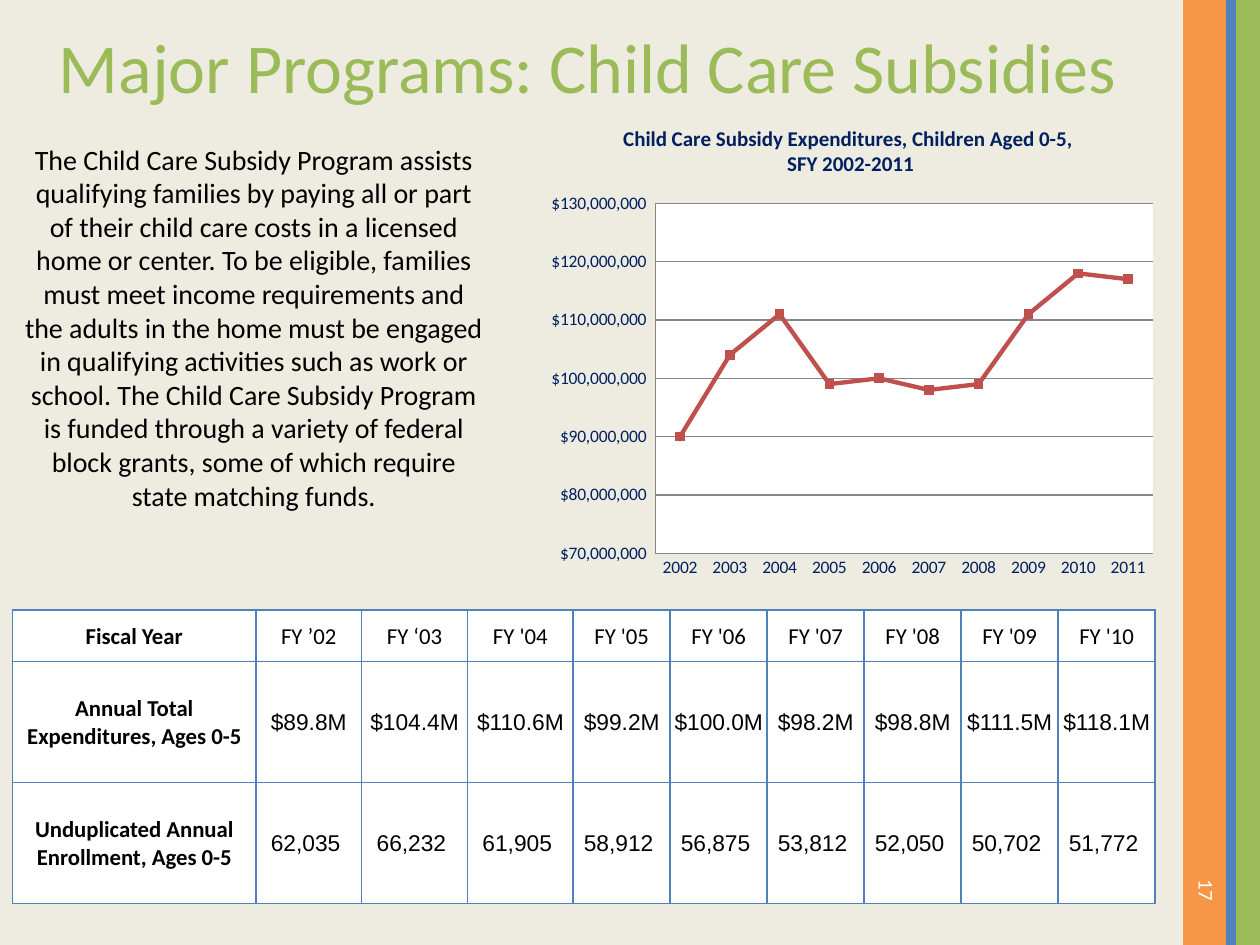
from dataclasses import dataclass

from lxml import etree
from pptx import Presentation
from pptx.chart.data import CategoryChartData
from pptx.dml.color import RGBColor
from pptx.enum import chart as ch, shapes, text
from pptx.oxml import ns, parse_xml
from pptx.util import Inches, Pt


@dataclass(frozen=True)
class Theme:
    background: RGBColor = RGBColor.from_string("EEECE1")
    orange: RGBColor = RGBColor.from_string("F79646")
    green: RGBColor = RGBColor.from_string("9BBB59")
    blue: RGBColor = RGBColor.from_string("4F81BD")
    red: RGBColor = RGBColor.from_string("C0504D")
    navy: RGBColor = RGBColor.from_string("002060")
    grid: RGBColor = RGBColor.from_string("878787")
    white: RGBColor = RGBColor.from_string("FFFFFF")
    black: RGBColor = RGBColor.from_string("000000")
    font: str = "Calibri"
    figures: str = "Arial"
    title: int = 40
    body: int = 16
    table: int = 13
    small: int = 12
    axis: int = 10


THEME = Theme()
CENTER = text.PP_ALIGN.CENTER

TITLE = "Major Programs: Child Care Subsidies"
BODY = (
    "The Child Care Subsidy Program assists qualifying families by paying all or part "
    "of their child care costs in a licensed home or center. To be eligible, families "
    "must meet income requirements and the adults in the home must be engaged in "
    "qualifying activities such as work or school. The Child Care Subsidy Program is "
    "funded through a variety of federal block grants, some of which require state "
    "matching funds."
)
CHART_TITLE = "Child Care Subsidy Expenditures, Children Aged 0-5, \nSFY 2002-2011"

# Millions of dollars: whole for the chart (2002-2011), exact for the table (2002-2010)
CHART_MILLIONS = [90, 104, 111, 99, 100, 98, 99, 111, 118, 117]
SPENDING = [89.8, 104.4, 110.6, 99.2, 100.0, 98.2, 98.8, 111.5, 118.1]
ENROLLMENT = [62035, 66232, 61905, 58912, 56875, 53812, 52050, 50702, 51772]
TABLE_ROWS = [
    ["Fiscal Year", "FY ’02", "FY ‘03"] + [f"FY '{y:02}" for y in range(4, 11)],
    ["Annual Total Expenditures, Ages 0-5"] + [f"${v:.1f}M" for v in SPENDING],
    ["Unduplicated Annual Enrollment, Ages 0-5"] + [f"{n:,} " for n in ENROLLMENT],
]
COL_WIDTHS = [1.93] + [0.84] * 3 + [0.77] * 6
ROW_HEIGHTS = [0.41, 0.96, 0.96]


def style_font(font, size, color, name=THEME.font, bold=False):
    font.size, font.name, font.bold = Pt(size), name, bold
    font.color.rgb = color


def set_text(tf, content, size, color, align=CENTER):
    tf.text = content
    p = tf.paragraphs[0]
    p.alignment = align
    style_font(p.font, size, color)
    return p


def add_band(s, left, width, color):
    sp = s.shapes.add_shape(
        shapes.MSO_SHAPE.RECTANGLE, Inches(left), 0, Inches(width), Inches(7.5))
    sp.shadow.inherit = False
    sp.fill.solid()
    sp.fill.fore_color.rgb = color
    sp.line.fill.background()


def add_title(s):
    sp = s.shapes.title
    sp.left, sp.top, sp.width, sp.height = map(Inches, (0.25, 0.09, 8.83, 0.83))
    tf = sp.text_frame
    tf.margin_left = tf.margin_right = tf.margin_top = tf.margin_bottom = Inches(0.1)
    tf.vertical_anchor = text.MSO_ANCHOR.TOP
    tf.auto_size = text.MSO_AUTO_SIZE.NONE
    p = set_text(tf, TITLE, THEME.title, THEME.green)
    p.space_before = Pt(3)


def add_textbox(s, box, content, size, color, align=CENTER):
    sp = s.shapes.add_textbox(*map(Inches, box))
    sp.text_frame.word_wrap = True
    set_text(sp.text_frame, content, size, color, align)
    return sp


def set_borders(cell, color):
    tc_pr = cell._tc.get_or_add_tcPr()
    for i, side in enumerate(("lnL", "lnR", "lnT", "lnB")):
        tc_pr.insert(i, parse_xml(
            f'<a:{side} {ns.nsdecls("a")} w="12700"><a:solidFill>'
            f'<a:srgbClr val="{color}"/></a:solidFill></a:{side}>'))


def add_table(s):
    table = s.shapes.add_table(
        len(ROW_HEIGHTS), len(COL_WIDTHS), Inches(0.1), Inches(4.84),
        Inches(sum(COL_WIDTHS)), Inches(sum(ROW_HEIGHTS))).table
    table.first_row = table.horz_banding = False
    for col, width in zip(table.columns, COL_WIDTHS):
        col.width = Inches(width)
    for row, height in zip(table.rows, ROW_HEIGHTS):
        row.height = Inches(height)
    for i, values in enumerate(TABLE_ROWS):
        for j, value in enumerate(values):
            cell = table.cell(i, j)
            cell.fill.solid()
            cell.fill.fore_color.rgb = THEME.white
            cell.vertical_anchor = text.MSO_ANCHOR.MIDDLE
            cell.margin_left = cell.margin_right = cell.margin_top = Inches(0.01)
            cell.margin_bottom = 0
            p = set_text(cell.text_frame, value, THEME.table, THEME.black)
            p.font.bold = j == 0
            if i and j:
                p.font.name = THEME.figures
            set_borders(cell, THEME.blue)


def style_plot_area(chart):
    """Fix the inner plot area and fill it white."""
    area = chart._chartSpace.chart.plotArea
    for layout in area.findall(ns.qn("c:layout")):
        area.remove(layout)
    place = "".join(
        f'<c:{tag} val="{val}"/>' for tag, val in (
            ("layoutTarget", "inner"), ("xMode", "edge"), ("yMode", "edge"),
            ("x", 0.19), ("y", 0.205), ("w", 0.79), ("h", 0.725)))
    area.insert(0, parse_xml(
        f'<c:layout {ns.nsdecls("c")}><c:manualLayout>{place}</c:manualLayout></c:layout>'))
    sp_pr = etree.SubElement(area, ns.qn("c:spPr"))
    sp_pr.append(parse_xml(
        f'<a:solidFill {ns.nsdecls("a")}><a:srgbClr val="{THEME.white}"/></a:solidFill>'))


def add_chart(s):
    data = CategoryChartData()
    data.categories = [str(y) for y in range(2002, 2012)]
    data.add_series("Series 1", [v * 1_000_000 for v in CHART_MILLIONS])
    chart = s.shapes.add_chart(
        ch.XL_CHART_TYPE.LINE_MARKERS, *map(Inches, (4.25, 0.83, 5, 3.83)), data).chart
    chart.has_legend = False
    style_font(chart.font, THEME.axis, THEME.navy)
    chart.has_title = True
    chart.chart_title.include_in_layout = False
    tf = chart.chart_title.text_frame
    tf.text = CHART_TITLE
    for p in tf.paragraphs:
        style_font(p.font, THEME.small, THEME.navy, bold=True)

    # Axes
    value_axis = chart.value_axis
    value_axis.minimum_scale, value_axis.maximum_scale = 70_000_000, 130_000_000
    value_axis.major_unit = 10_000_000
    value_axis.tick_labels.number_format = '"$"#,##0_)'
    value_axis.tick_labels.number_format_is_linked = False
    value_axis.major_gridlines.format.line.color.rgb = THEME.grid
    for axis in (value_axis, chart.category_axis):
        axis.major_tick_mark = ch.XL_TICK_MARK.NONE
        axis.format.line.color.rgb = THEME.grid

    # Line and markers
    chart.plots[0].vary_by_categories = False
    series = chart.plots[0].series[0]
    series.smooth = False
    series.format.line.color.rgb = THEME.red
    series.format.line.width = Pt(2.5)
    series.marker.style = ch.XL_MARKER_STYLE.SQUARE
    series.marker.size = 5
    series.marker.format.fill.solid()
    series.marker.format.fill.fore_color.rgb = THEME.red
    series.marker.format.line.color.rgb = THEME.red
    style_plot_area(chart)


def main():
    prs = Presentation()
    prs.slide_width, prs.slide_height = Inches(10), Inches(7.5)
    s = prs.slides.add_slide(prs.slide_layouts[5])
    s.background.fill.solid()
    s.background.fill.fore_color.rgb = THEME.background

    # Side bands
    add_band(s, 9.39, 0.35, THEME.orange)
    add_band(s, 9.81, 0.19, THEME.green)
    add_band(s, 9.73, 0.08, THEME.blue)

    # Content
    add_title(s)
    add_table(s)
    add_chart(s)
    body = add_textbox(s, (0.1, 1.08, 3.83, 3.06), BODY, THEME.body, THEME.black)
    body.text_frame.auto_size = text.MSO_AUTO_SIZE.SHAPE_TO_FIT_TEXT

    # Page number
    number = add_textbox(s, (9.05, 6.52, 1.06, 0.4), "17", THEME.small, THEME.white,
                         text.PP_ALIGN.RIGHT)
    number.rotation = 90
    number.text_frame.vertical_anchor = text.MSO_ANCHOR.MIDDLE

    prs.save("out.pptx")


if __name__ == "__main__":
    main()
